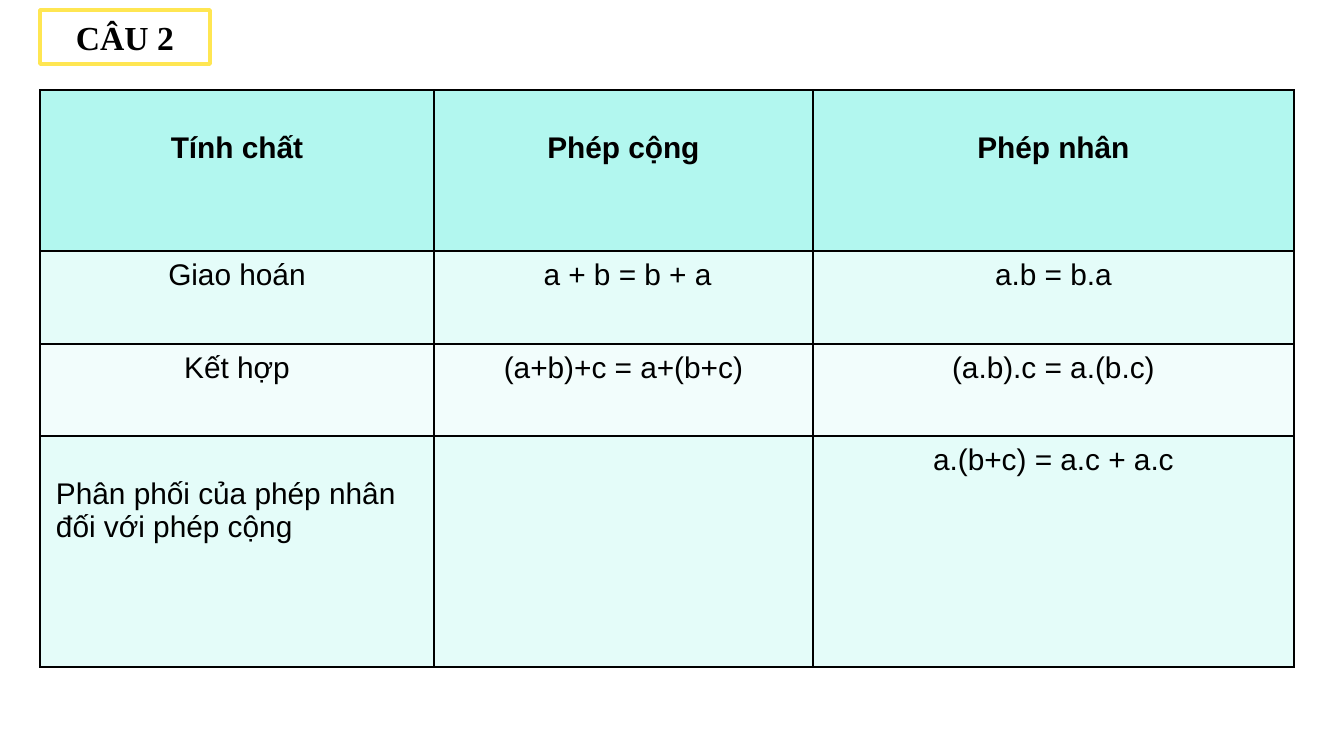
from dataclasses import dataclass

from lxml.etree import SubElement
from pptx import Presentation
from pptx.dml.color import RGBColor
from pptx.enum.text import MSO_ANCHOR as Anchor, MSO_AUTO_SIZE as AutoSize, PP_ALIGN as Align
from pptx.oxml.ns import qn
from pptx.util import Emu, Pt

PX_PER_INCH = 134.4
LINE = 34  # height of one line of table text, in px
BLACK = "000000"


def px(length: int) -> Emu:
    return Emu(round(length * 914400 / PX_PER_INCH))


def color(value: str) -> RGBColor:
    return RGBColor.from_string(value)


@dataclass
class Row:
    height: int
    fill: str
    texts: tuple[str, str, str]
    bold: bool = False


COLUMN_WIDTHS = (394, 379, 481)
ROWS = (
    Row(161, "B2F7EF", ("Tính chất", "Phép cộng", "Phép nhân"), bold=True),
    Row(93, "E4FCF9", ("Giao hoán", " a + b = b + a", "a.b = b.a")),
    Row(92, "F2FDFC", ("Kết hợp", "(a+b)+c = a+(b+c)", "(a.b).c = a.(b.c)")),
    Row(231, "E4FCF9", ("Phân phối của phép nhân đối với phép cộng", "", "a.(b+c) = a.c + a.c")),
)


def style_text(para, font: str, size: int, bold: bool, align: Align = Align.CENTER) -> None:
    para.alignment = align
    para.font.name = font
    para.font.size = Pt(size)
    para.font.bold = bold
    para.font.color.rgb = color(BLACK)


def add_borders(cell) -> None:
    """Outline the cell; call before filling it, as borders come first in the XML."""
    properties = cell._tc.get_or_add_tcPr()
    for side in ("a:lnL", "a:lnR", "a:lnT", "a:lnB"):
        line = SubElement(properties, qn(side), w=str(Pt(1)))
        SubElement(SubElement(line, qn("a:solidFill")), qn("a:srgbClr"), val=BLACK)


def fill_cell(cell, text: str, row: Row, lowered: bool, align: Align) -> None:
    """Write and format one cell; a lowered text starts one line further down."""
    add_borders(cell)
    cell.fill.solid()
    cell.fill.fore_color.rgb = color(row.fill)
    cell.margin_left = cell.margin_right = px(16)
    cell.margin_top = px(8 + LINE if lowered else 8)
    cell.margin_bottom = px(8)
    cell.text = text
    style_text(cell.text_frame.paragraphs[0], "Arial", 16, row.bold, align)


def add_property_table(slide) -> None:
    frame = slide.shapes.add_table(
        len(ROWS), len(COLUMN_WIDTHS), px(40), px(90),
        px(sum(COLUMN_WIDTHS)), px(sum(row.height for row in ROWS)),
    )
    table = frame.table
    table.horz_banding = False
    for column, width in zip(table.columns, COLUMN_WIDTHS):
        column.width = px(width)
    for row_index, row in enumerate(ROWS):
        table.rows[row_index].height = px(row.height)
        for column_index, text in enumerate(row.texts):
            is_long = row is ROWS[-1] and column_index == 0
            fill_cell(table.cell(row_index, column_index), text, row,
                      lowered=row.bold or is_long,
                      align=Align.LEFT if is_long else Align.CENTER)


def format_title(title) -> None:
    title.left, title.top, title.width, title.height = px(40), px(10), px(170), px(54)
    title.fill.solid()
    title.fill.fore_color.rgb = color("FFFFFF")
    title.line.color.rgb = color("FFE652")
    title.line.width = Pt(2)
    title.text = "CÂU 2"
    title.text_frame.auto_size = AutoSize.NONE
    title.text_frame.vertical_anchor = Anchor.MIDDLE
    style_text(title.text_frame.paragraphs[0], "Times New Roman", 18, True)


def main() -> None:
    deck = Presentation()
    deck.slide_width, deck.slide_height = px(1344), px(756)
    slide = deck.slides.add_slide(deck.slide_layouts.get_by_name("Title Only"))
    format_title(slide.shapes.title)
    add_property_table(slide)
    deck.save("out.pptx")


if __name__ == "__main__":
    main()
